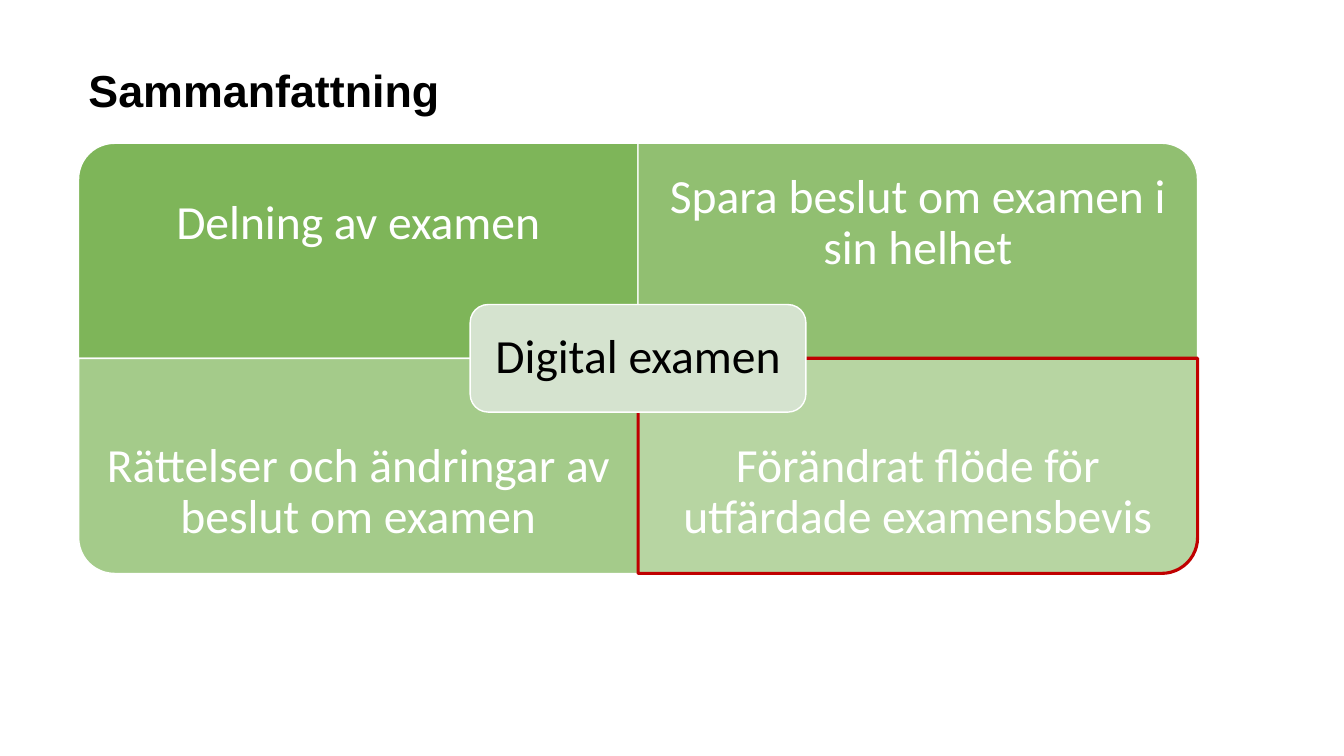
"""Build the summary slide: four exam themes around a central label."""
from lxml import etree
from pptx import Presentation
from pptx.dml.color import RGBColor
from pptx.enum.shapes import MSO_SHAPE
from pptx.enum.text import MSO_ANCHOR, MSO_AUTO_SIZE, PP_ALIGN
from pptx.oxml.ns import qn
from pptx.util import Cm, Pt

QUADRANT_SHAPE = MSO_SHAPE.ROUND_1_RECTANGLE
CENTRE_SHAPE = MSO_SHAPE.ROUNDED_RECTANGLE
TOP, MIDDLE = MSO_ANCHOR.TOP, MSO_ANCHOR.MIDDLE
LEFT, CENTRE = PP_ALIGN.LEFT, PP_ALIGN.CENTER
NO_FIT = MSO_AUTO_SIZE.NONE

BLACK = RGBColor(0x00, 0x00, 0x00)
WHITE = RGBColor(0xFF, 0xFF, 0xFF)
GREEN = RGBColor(0x70, 0xAD, 0x47)
PALE_GREEN = RGBColor(0xD5, 0xE3, 0xCF)
RED = RGBColor(0xC0, 0x00, 0x00)

MATRIX_LEFT, MATRIX_TOP = 1.98, 3.61
QUADRANT_WIDTH, QUADRANT_HEIGHT = 14.1, 5.42
LABEL_HEIGHT = 4.06
CENTRE_WIDTH, CENTRE_HEIGHT = 8.46, 2.71
CENTRE_MARGIN = 0.13

TITLE_FONT = {"name": "Arial", "size": Pt(32), "bold": True}
LABEL_FONT = {"name": "Calibri", "size": Pt(34), "bold": False}

QUADRANTS = [
    ("Delning av examen", 0, 0, 270, 90, WHITE, 1),
    ("Spara beslut om examen i sin helhet", 0, 1, 0, 77, WHITE, 1),
    ("Rättelser och ändringar av beslut om examen", 1, 0, 180, 63, WHITE, 1),
    ("Förändrat flöde för utfärdade examensbevis", 1, 1, 90, 50, RED, 2.25),
]


def set_attributes(target, values):
    """Set every attribute named in values on the target."""
    for name, value in values.items():
        setattr(target, name, value)


def place(shape, left, top, width, height):
    """Position a shape with lengths in centimetres."""
    set_attributes(shape, {"left": Cm(left), "top": Cm(top),
                           "width": Cm(width), "height": Cm(height)})


def write_text(shape, text, font, color, alignment, anchor, inset):
    """Fill a shape with one formatted paragraph."""
    frame = shape.text_frame
    frame.text = text
    set_attributes(frame, {"word_wrap": True, "auto_size": NO_FIT,
                           "vertical_anchor": anchor})
    set_attributes(frame, {f"margin_{side}": Cm(inset)
                           for side in ("left", "top", "right", "bottom")})
    paragraph = frame.paragraphs[0]
    set_attributes(paragraph, {"alignment": alignment, "line_spacing": 0.9})
    set_attributes(paragraph.runs[0].font, font)
    paragraph.runs[0].font.color.rgb = color


def add_panel(group, kind, box, fill, line, line_width):
    """Add a flat filled shape with an outline."""
    panel = group.shapes.add_shape(kind, *map(Cm, box))
    panel.shadow.inherit = False
    panel.fill.solid()
    panel.fill.fore_color.rgb = fill
    panel.line.color.rgb = line
    panel.line.width = Pt(line_width)
    return panel


def add_label(group, box, text, color, inset):
    """Add a centred text label."""
    label = group.shapes.add_textbox(*map(Cm, box))
    write_text(label, text, LABEL_FONT, color, CENTRE, MIDDLE, inset)


def set_opacity(shape, percent):
    """Make a solid fill partly transparent."""
    color = shape.fill._xPr.find(qn("a:solidFill"))[0]
    etree.SubElement(color, qn("a:alpha"), val=str(percent * 1000))


def add_quadrant(group, text, row, column, rotation, opacity, line, line_width):
    """Add one quadrant with its rounded corner turned outwards."""
    left = MATRIX_LEFT + column * QUADRANT_WIDTH
    top = MATRIX_TOP + row * QUADRANT_HEIGHT
    width, height = QUADRANT_WIDTH, QUADRANT_HEIGHT
    if rotation % 180:
        width, height = height, width
    box = (left + (QUADRANT_WIDTH - width) / 2,
           top + (QUADRANT_HEIGHT - height) / 2, width, height)
    panel = add_panel(group, QUADRANT_SHAPE, box, GREEN, line, line_width)
    panel.rotation = rotation
    set_opacity(panel, opacity)
    label_top = top + row * (QUADRANT_HEIGHT - LABEL_HEIGHT)
    add_label(group, (left, label_top, QUADRANT_WIDTH, LABEL_HEIGHT),
              text, WHITE, 0.67)


def add_centre(group, text):
    """Add the label where the four quadrants meet."""
    left = MATRIX_LEFT + QUADRANT_WIDTH - CENTRE_WIDTH / 2
    top = MATRIX_TOP + QUADRANT_HEIGHT - CENTRE_HEIGHT / 2
    box = (left, top, CENTRE_WIDTH, CENTRE_HEIGHT)
    add_panel(group, CENTRE_SHAPE, box, PALE_GREEN, WHITE, 1)
    label_box = (left + CENTRE_MARGIN, top + CENTRE_MARGIN,
                 CENTRE_WIDTH - 2 * CENTRE_MARGIN,
                 CENTRE_HEIGHT - 2 * CENTRE_MARGIN)
    add_label(group, label_box, text, BLACK, 0.36)


def main():
    """Create and save the presentation."""
    presentation = Presentation()
    presentation.slide_width = Cm(33.87)
    presentation.slide_height = Cm(19.05)
    slide = presentation.slides.add_slide(presentation.slide_layouts[5])
    title = slide.shapes.title
    place(title, MATRIX_LEFT, 1.6, 2 * QUADRANT_WIDTH, 2.03)
    write_text(title, "Sammanfattning", TITLE_FONT, BLACK, LEFT, TOP, 0.25)
    title.text_frame.margin_top = Cm(0.13)
    matrix = slide.shapes.add_group_shape()
    for quadrant in QUADRANTS:
        add_quadrant(matrix, *quadrant)
    add_centre(matrix, "Digital examen")
    presentation.save("out.pptx")


if __name__ == "__main__":
    main()
